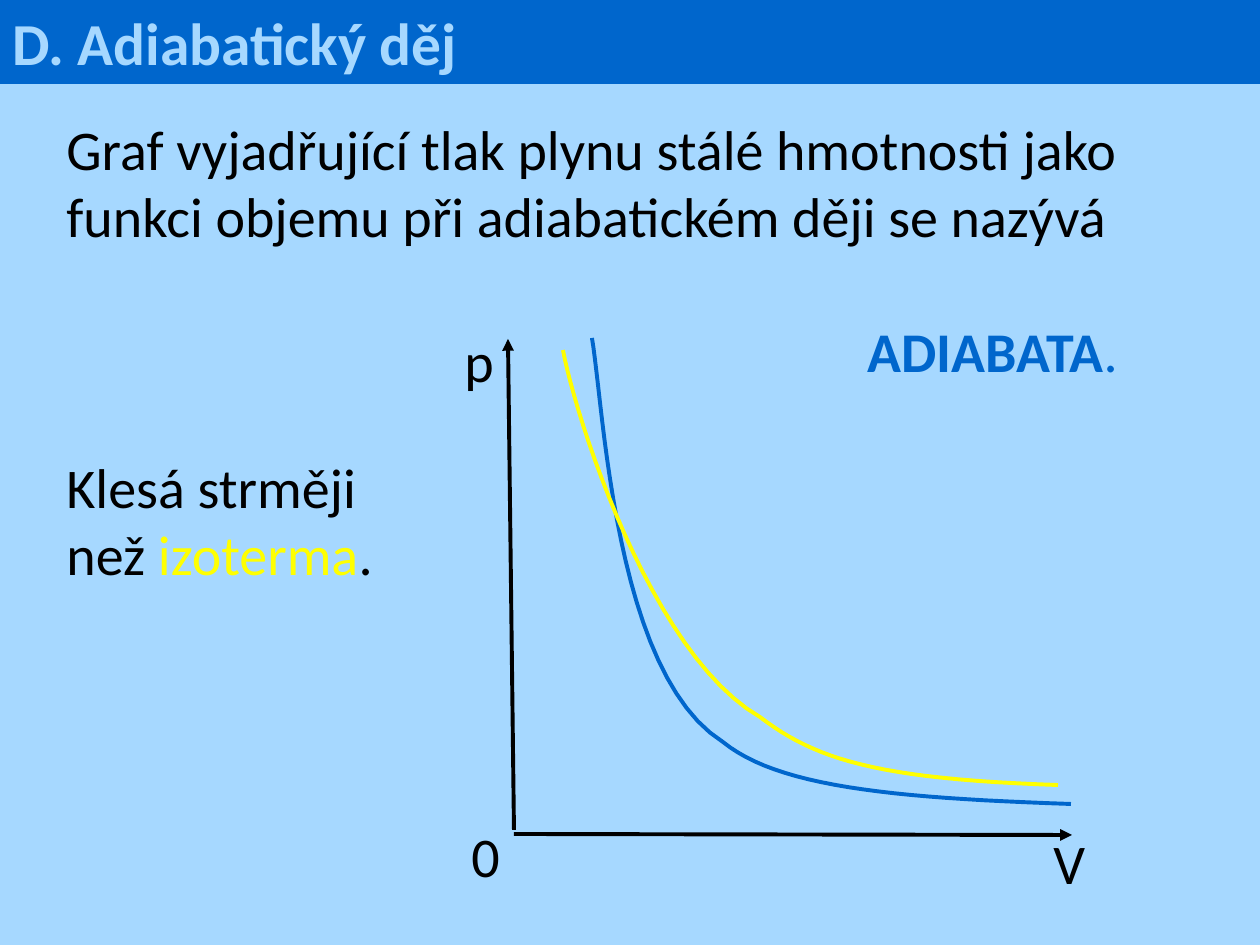
from collections import namedtuple
from dataclasses import dataclass

from lxml.etree import SubElement
from pptx import Presentation
from pptx.dml.color import RGBColor
from pptx.enum.shapes import MSO_CONNECTOR, MSO_SHAPE
from pptx.enum.text import MSO_ANCHOR, MSO_AUTO_SIZE, PP_ALIGN
from pptx.oxml.ns import qn
from pptx.util import Emu, Pt

Box = namedtuple("Box", "left top width height")


@dataclass(frozen=True)
class Theme:
    background: str = "A6D8FF"
    accent: str = "0066CC"
    isotherm: str = "FFFF00"
    ink: str = "000000"
    font: str = "Calibri"
    title_size: int = 34
    body_size: int = 32
    line_gap: int = 39
    line_width: float = 2.25


THEME = Theme()
PX_PER_INCH = 126
CURVE_STEPS = 24


def px(length):
    return Emu(round(length * 914400 / PX_PER_INCH))


def color(value):
    return RGBColor.from_string(value)


def inside(box, left, top, width, height):
    return Box(box.left + left, box.top + top, width, height)


def add_run(paragraph, text, fill, size=THEME.body_size, bold=False):
    run = paragraph.add_run()
    run.text = text
    run.font.name = THEME.font
    run.font.size = Pt(size)
    run.font.bold = bold
    run.font.color.rgb = color(fill)


def add_text_box(slide, box):
    text_frame = slide.shapes.add_textbox(*map(px, box)).text_frame
    text_frame.word_wrap = False
    text_frame.auto_size = MSO_AUTO_SIZE.SHAPE_TO_FIT_TEXT
    return text_frame


def style_line(shape, fill):
    shape.line.color.rgb = color(fill)
    shape.line.width = Pt(THEME.line_width)


def add_title_bar(slide, box, title):
    shape = slide.shapes.add_shape(MSO_SHAPE.RECTANGLE, *map(px, box))
    shape.shadow.inherit = False
    shape.fill.solid()
    shape.fill.fore_color.rgb = color(THEME.accent)
    shape.line.fill.background()
    text_frame = shape.text_frame
    text_frame.vertical_anchor = MSO_ANCHOR.MIDDLE
    paragraph = text_frame.paragraphs[0]
    paragraph.alignment = PP_ALIGN.LEFT
    add_run(paragraph, title, THEME.background, THEME.title_size, True)


def add_body(slide, box):
    ink, accent = THEME.ink, THEME.accent
    left, right = PP_ALIGN.LEFT, PP_ALIGN.RIGHT
    lines = [
        (left, 0, [("Graf vyjadřující tlak plynu stálé hmotnosti jako", ink, False)]),
        (left, 0, [("funkci objemu při adiabatickém ději se nazývá", ink, False)]),
        (right, THEME.line_gap, [("ADIABATA", accent, True), (".", accent, False)]),
        (left, THEME.line_gap, [("Klesá strměji", ink, False)]),
        (left, 0, [("než ", ink, False), ("izoterma", THEME.isotherm, False), (".", ink, False)]),
    ]
    text_frame = add_text_box(slide, box)
    for index, (alignment, gap, runs) in enumerate(lines):
        paragraph = text_frame.add_paragraph() if index else text_frame.paragraphs[0]
        paragraph.alignment = alignment
        paragraph.space_before = Pt(gap)
        for text, fill, bold in runs:
            add_run(paragraph, text, fill, bold=bold)


def add_axis(slide, box, start, end):
    points = [px(box.left + start[0]), px(box.top + start[1]),
              px(box.left + end[0]), px(box.top + end[1])]
    connector = slide.shapes.add_connector(MSO_CONNECTOR.STRAIGHT, *points)
    style_line(connector, THEME.ink)
    SubElement(connector.line._get_or_add_ln(), qn("a:tailEnd"), type="triangle")
    SubElement(connector._element.spPr, qn("a:effectLst"))


def bezier_point(controls, t):
    weights = ((1 - t) ** 3, 3 * t * (1 - t) ** 2, 3 * t ** 2 * (1 - t), t ** 3)
    return tuple(sum(w * p[axis] for w, p in zip(weights, controls)) for axis in (0, 1))


def add_curve(slide, box, controls, fill):
    points = [controls[0]]
    for first in range(0, len(controls) - 1, 3):
        segment = controls[first:first + 4]
        points += [bezier_point(segment, step / CURVE_STEPS)
                   for step in range(1, CURVE_STEPS + 1)]
    points = [(px(box.left + x), px(box.top + y)) for x, y in points]
    builder = slide.shapes.build_freeform(*points[0])
    builder.add_line_segments(points[1:], close=False)
    shape = builder.convert_to_shape()
    shape.shadow.inherit = False
    shape.fill.background()
    style_line(shape, fill)


def add_diagram(slide, box):
    add_axis(slide, box, (62, 510), (56, 19))
    add_axis(slide, box, (62, 514), (620, 515))
    for text, left, top, width in (("p", 0, 0, 55), ("V", 589, 502, 58), ("0", 7, 495, 54)):
        text_frame = add_text_box(slide, inside(box, left, top, width, 81))
        add_run(text_frame.paragraphs[0], text, THEME.ink)
    adiabat = [(140, 18), (152, 87), (162, 354), (271, 422),
               (325, 466), (436, 478), (619, 484)]
    isotherm = [(111, 30), (123, 95), (198, 334), (308, 397),
                (363, 439), (424, 459), (606, 465)]
    add_curve(slide, box, adiabat, THEME.accent)
    add_curve(slide, box, isotherm, THEME.isotherm)


def main():
    presentation = Presentation()
    presentation.slide_width = px(1260)
    presentation.slide_height = px(945)
    slide = presentation.slides.add_slide(presentation.slide_layouts[6])
    slide.background.fill.solid()
    slide.background.fill.fore_color.rgb = color(THEME.background)
    add_body(slide, Box(54, 108, 1099, 488))
    add_title_bar(slide, Box(0, 0, 1260, 84), "D. Adiabatický děj")
    add_diagram(slide, Box(452, 320, 647, 583))
    presentation.save("out.pptx")


if __name__ == "__main__":
    main()
